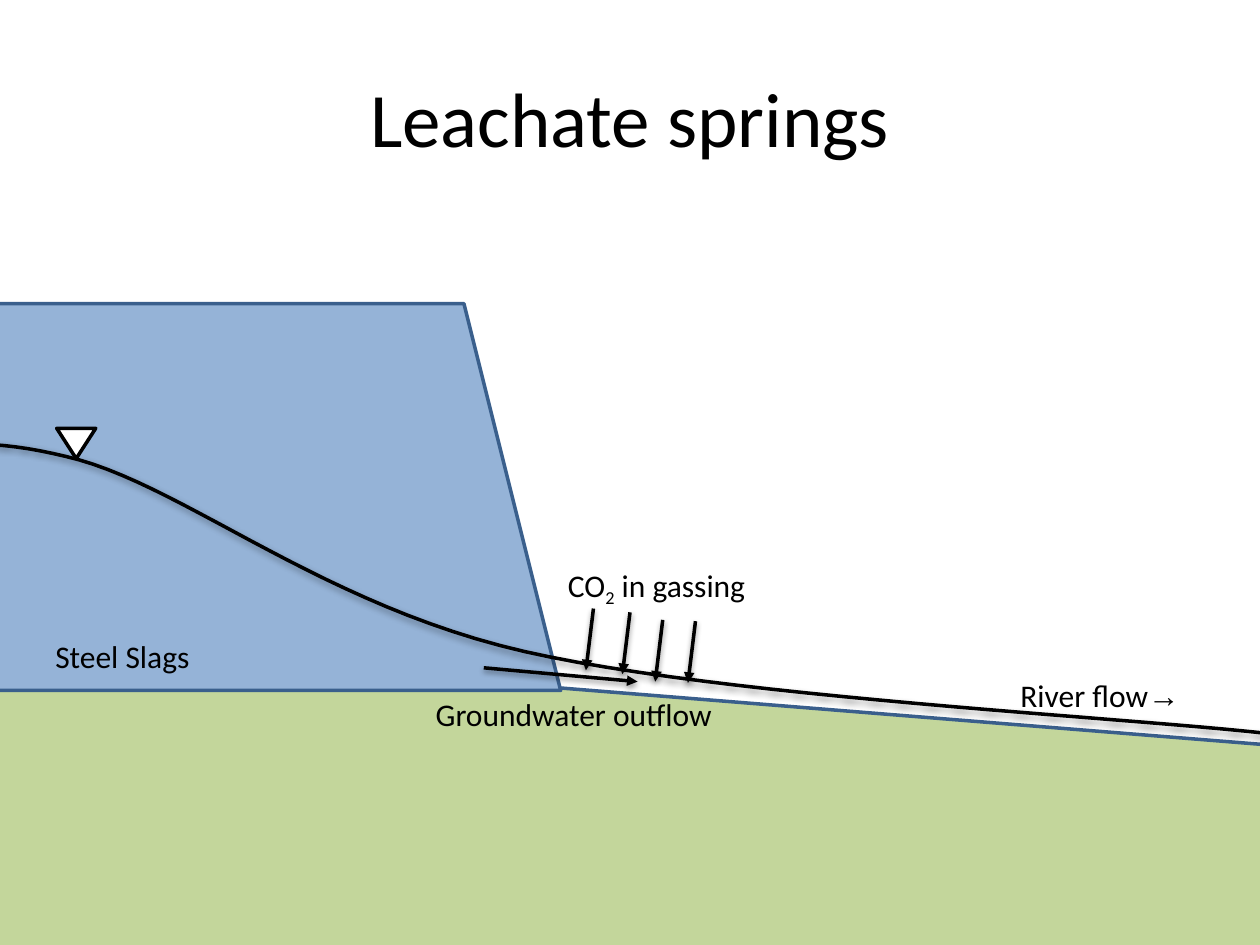
import pptx
import pptx.dml.color
import pptx.enum.shapes
import pptx.enum.text
import pptx.oxml
import pptx.oxml.ns
import pptx.util
from dataclasses import dataclass
from typing import NamedTuple

COLUMNS, ROWS = 100, 75
CELL = pptx.util.Inches(0.1)
SHAPES = pptx.enum.shapes.MSO_SHAPE


@dataclass(frozen=True)
class Theme:
    ink: str = "000000"
    paper: str = "FFFFFF"
    ground: str = "C3D69B"
    slag: str = "95B3D7"
    edge: str = "3A5F8C"
    font: str = "Calibri"
    arrow_font: str = "Times New Roman"
    title_size: int = 44
    label_size: int = 18
    line_width: int = 2


THEME = Theme()


class Point(NamedTuple):
    column: float
    row: float


class Area(NamedTuple):
    column: float
    row: float
    columns: float
    rows: float


class Span(NamedTuple):
    text: str
    font: str = THEME.font
    bold: bool = False
    baseline: int = 0


class Label(NamedTuple):
    area: Area
    spans: list[Span]


class Arrow(NamedTuple):
    start: Point
    end: Point


def cells(*counts: float) -> list[int]:
    """Turn grid counts into lengths."""
    return [round(count * CELL) for count in counts]


def color(value: str):
    return pptx.dml.color.RGBColor.from_string(value)


def set_line(line, line_color: str) -> None:
    line.color.rgb = color(line_color)
    line.width = pptx.util.Pt(THEME.line_width)


def add_shadow(shape) -> None:
    """Give a line a soft shadow that falls straight down."""
    shape._element.spPr.append(pptx.oxml.parse_xml(
        f'<a:effectLst {pptx.oxml.ns.nsdecls("a")}>'
        '<a:outerShdw blurRad="40000" dist="20000" dir="5400000" rotWithShape="0">'
        '<a:srgbClr val="000000"><a:alpha val="38000"/></a:srgbClr>'
        '</a:outerShdw></a:effectLst>'))


def add_text(para, text: str, *, size: int, font: str = THEME.font,
             bold: bool = False, baseline: int = 0) -> None:
    span = para.add_run()
    span.text = text
    span.font.name = font
    span.font.size = pptx.util.Pt(size)
    span.font.bold = bold
    span.font.color.rgb = color(THEME.ink)
    if baseline:
        span.font._element.set("baseline", str(baseline * 1000))


def add_block(page, kind, area: Area, fill: str, edge: str, rotation: float = 0):
    block = page.shapes.add_shape(kind, *cells(*area))
    block.shadow.inherit = False
    block.fill.solid()
    block.fill.fore_color.rgb = color(fill)
    set_line(block.line, edge)
    block.rotation = rotation
    return block


def add_label(page, label: Label) -> None:
    box = page.shapes.add_textbox(*cells(*label.area))
    box.text_frame.word_wrap = False
    box.text_frame.auto_size = pptx.enum.text.MSO_AUTO_SIZE.SHAPE_TO_FIT_TEXT
    for span in label.spans:
        add_text(box.text_frame.paragraphs[0], span.text, size=THEME.label_size,
                 font=span.font, bold=span.bold, baseline=span.baseline)


def add_arrow(page, arrow: Arrow) -> None:
    connector = page.shapes.add_connector(
        pptx.enum.shapes.MSO_CONNECTOR.STRAIGHT, *cells(*arrow.start, *arrow.end))
    set_line(connector.line, THEME.ink)
    connector.line._get_or_add_ln().append(pptx.oxml.parse_xml(
        f'<a:tailEnd {pptx.oxml.ns.nsdecls("a")} type="triangle"/>'))
    add_shadow(connector)


def bezier(knots: list[Point], share: float) -> list[int]:
    """Point at a share of the way along a cubic curve."""
    rest = 1 - share
    weights = (rest**3, 3 * rest**2 * share, 3 * rest * share**2, share**3)
    return cells(*(sum(w * k for w, k in zip(weights, axis)) for axis in zip(*knots)))


def add_curve(page, knots: list[Point], steps: int = 24) -> None:
    points = [bezier(knots[first:first + 4], step / steps)
              for first in range(0, len(knots) - 1, 3)
              for step in range(1, steps + 1)]
    builder = page.shapes.build_freeform(*cells(*knots[0]))
    builder.add_line_segments(points, close=False)
    curve = builder.convert_to_shape()
    curve.fill.background()
    set_line(curve.line, THEME.ink)
    add_shadow(curve)


GROUND = Area(-13.3, 54.8, 119.4, 24.6)
SLAG_HEAP = Area(-12.2, 24.1, 56.7, 30.7)
LEVEL_MARK = Area(4.5, 34, 3.1, 2.4)

WATER_TABLE = [
    Point(-11.4, 37), Point(-7, 35.6), Point(-2.6, 34.1), Point(6.3, 36.5),
    Point(15.1, 39), Point(25.9, 48.1), Point(41.6, 51.7),
    Point(57.3, 55.3), Point(88.8, 56.9), Point(100.5, 58.2),
    Point(112.2, 59.4), Point(111.8, 59.3), Point(111.5, 59.2),
]

LABELS = [
    Label(Area(33.6, 54.7, 24.3, 4), [Span("Groundwater outflow")]),
    Label(Area(3.4, 50.1, 12.8, 4), [Span("Steel Slags")]),
    Label(Area(44.1, 44.4, 16.4, 4),
          [Span("CO"), Span("2", baseline=-25), Span(" in gassing")]),
    Label(Area(80, 53.2, 14.8, 4),
          [Span("River flow"), Span("→", THEME.arrow_font, bold=True)]),
]

OUTFLOW = Arrow(Point(38.4, 53), Point(50.6, 54.1))
GAS_TOPS = [Point(47.1, 48.3), Point(50, 48.6), Point(52.6, 49.2), Point(55.2, 49.3)]
GAS_LEAN, GAS_DROP = -0.6, 4.9


def main() -> None:
    deck = pptx.Presentation()
    deck.slide_width, deck.slide_height = cells(COLUMNS, ROWS)
    page = deck.slides.add_slide(deck.slide_layouts[5])

    # Title
    title = page.shapes.title
    title.left, title.top, title.width, title.height = cells(5, 3, 90, 12.5)
    title.text_frame.vertical_anchor = pptx.enum.text.MSO_ANCHOR.MIDDLE
    para = title.text_frame.paragraphs[0]
    para.alignment = pptx.enum.text.PP_ALIGN.CENTER
    add_text(para, "Leachate springs", size=THEME.title_size)

    # Ground, slag heap and water table
    add_block(page, SHAPES.RECTANGLE, GROUND, THEME.ground, THEME.edge, rotation=4.6)
    add_block(page, SHAPES.TRAPEZOID, SLAG_HEAP, THEME.slag, THEME.edge)
    add_curve(page, WATER_TABLE)
    mark = add_block(page, SHAPES.ISOSCELES_TRIANGLE, LEVEL_MARK, THEME.paper, THEME.ink)
    mark._element.spPr.xfrm.set("flipV", "1")

    # Flow arrows and labels
    add_arrow(page, OUTFLOW)
    for top in GAS_TOPS:
        add_arrow(page, Arrow(top, Point(top.column + GAS_LEAN, top.row + GAS_DROP)))
    for label in LABELS:
        add_label(page, label)

    deck.save("out.pptx")


if __name__ == "__main__":
    main()
